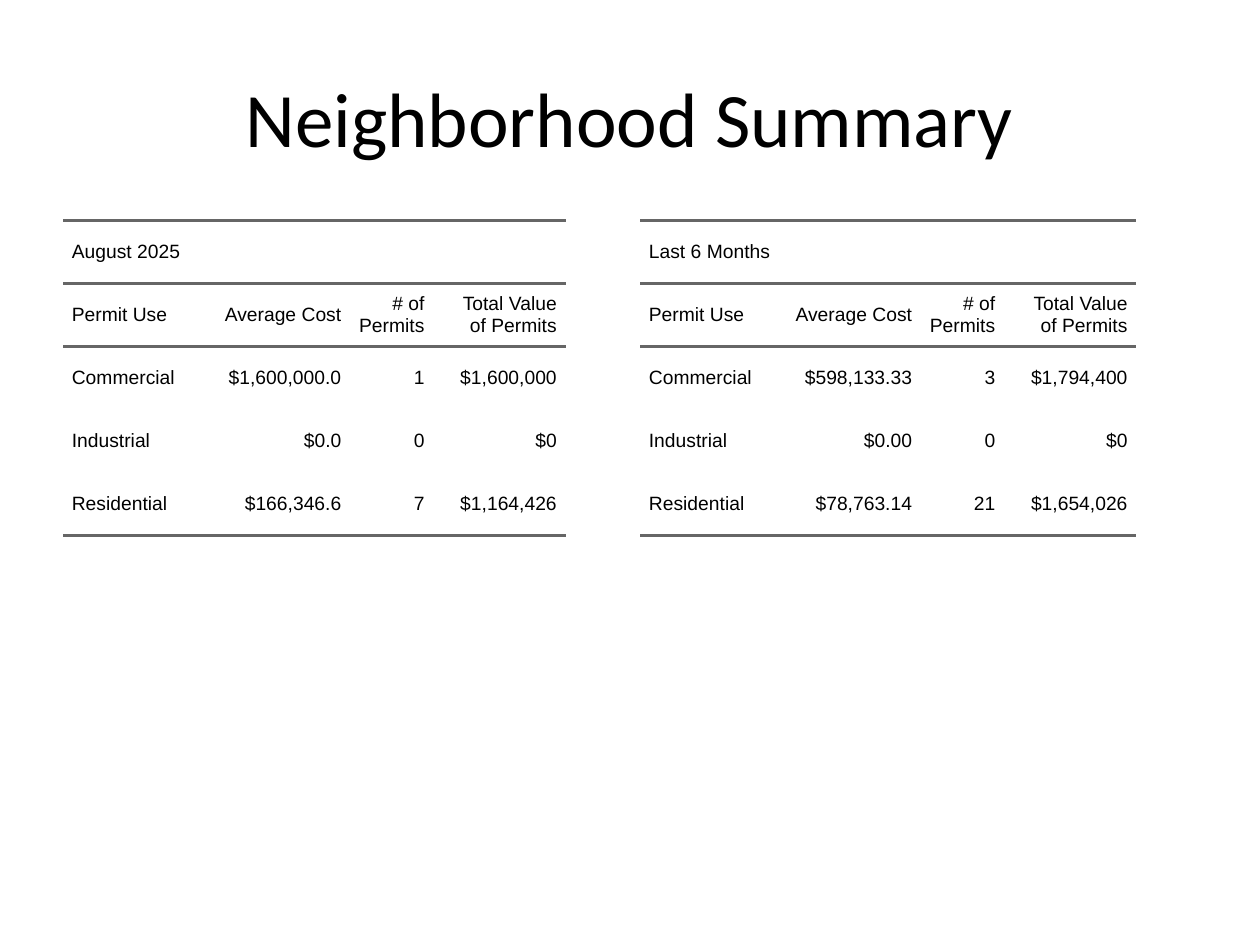
import pptx
import pptx.util
import pptx.dml.color
import pptx.enum.text
import pptx.oxml
import pptx.oxml.ns

Inches, Pt = pptx.util.Inches, pptx.util.Pt
ALIGN = pptx.enum.text.PP_ALIGN
MIDDLE = pptx.enum.text.MSO_ANCHOR.MIDDLE

TITLE = "Neighborhood Summary"
HEADER = ("Permit Use", "Average Cost", "# of Permits", "Total Value of Permits")
SUMMARIES = [
    {
        "period": "August 2025",
        "left": 0.5,
        "columns": (1.1, 1.18, 0.66, 1.05),
        "permits": [
            ("Commercial", "$1,600,000.0", "1", "$1,600,000"),
            ("Industrial", "$0.0", "0", "$0"),
            ("Residential", "$166,346.6", "7", "$1,164,426"),
        ],
    },
    {
        "period": "Last 6 Months",
        "left": 5.08,
        "columns": (1.1, 1.13, 0.66, 1.05),
        "permits": [
            ("Commercial", "$598,133.33", "3", "$1,794,400"),
            ("Industrial", "$0.00", "0", "$0"),
            ("Residential", "$78,763.14", "21", "$1,654,026"),
        ],
    },
]
COLORS = {"text": "000000", "rule": "666666"}
TABLE_TOP, ROW_HEIGHT, PADDING = 1.75, 0.5, 0.07
RULE_WIDTH = 1.5
PLAIN_STYLE = "{2D5ABB26-0587-4C30-8999-92F81FD0307C}"


def style_font(paragraph, name, size):
    paragraph.font.name = name
    paragraph.font.size = Pt(size)
    paragraph.font.color.rgb = pptx.dml.color.RGBColor.from_string(COLORS["text"])


def add_rule(cell, side):
    properties = cell._tc.get_or_add_tcPr()
    line = pptx.oxml.parse_xml(
        f'<a:{side} {pptx.oxml.ns.nsdecls("a")} w="{Pt(RULE_WIDTH)}">'
        f'<a:solidFill><a:srgbClr val="{COLORS["rule"]}"/></a:solidFill></a:{side}>'
    )
    properties.insert(len(properties) - 1, line)


def fill_cell(cell, text, align):
    cell.fill.background()
    cell.vertical_anchor = MIDDLE
    cell.margin_left = cell.margin_right = 0
    cell.margin_top = cell.margin_bottom = Inches(PADDING)
    paragraph = cell.text_frame.paragraphs[0]
    paragraph.text = text
    paragraph.alignment = align
    paragraph.space_before = paragraph.space_after = Pt(5)
    indents = paragraph._p.get_or_add_pPr()
    for side in ("marL", "marR"):
        indents.set(side, str(Inches(PADDING)))
    style_font(paragraph, "Arial", 11)


def add_summary(slide, summary):
    rows = [(summary["period"], "", "", ""), HEADER, *summary["permits"]]
    columns = summary["columns"]
    frame = slide.shapes.add_table(
        len(rows), len(columns), Inches(summary["left"]), Inches(TABLE_TOP),
        Inches(sum(columns)), Inches(ROW_HEIGHT * len(rows)),
    )
    table = frame.table
    table.first_row = table.horz_banding = False
    table._tbl.tblPr.find(pptx.oxml.ns.qn("a:tableStyleId")).text = PLAIN_STYLE
    for column, width in zip(table.columns, columns):
        column.width = Inches(width)
    for r, row in enumerate(rows):
        table.rows[r].height = Inches(ROW_HEIGHT)
        for c, text in enumerate(row):
            cell = table.cell(r, c)
            fill_cell(cell, text, ALIGN.RIGHT if c else ALIGN.LEFT)
            if r < 2:
                add_rule(cell, "lnT")
            if r < 2 or r == len(rows) - 1:
                add_rule(cell, "lnB")
    table.cell(0, 0).merge(table.cell(0, len(columns) - 1))


def main():
    deck = pptx.Presentation()
    deck.slide_width, deck.slide_height = Inches(10), Inches(7.5)
    slide = deck.slides.add_slide(deck.slide_layouts[5])
    for summary in SUMMARIES:
        add_summary(slide, summary)
    title = slide.shapes.title
    title.left, title.top, title.width, title.height = map(Inches, (0.5, 0.3, 9, 1.25))
    title.text_frame.vertical_anchor = MIDDLE
    paragraph = title.text_frame.paragraphs[0]
    paragraph.text = TITLE
    paragraph.alignment = ALIGN.CENTER
    style_font(paragraph, "Calibri", 44)
    deck.save("out.pptx")


if __name__ == "__main__":
    main()
